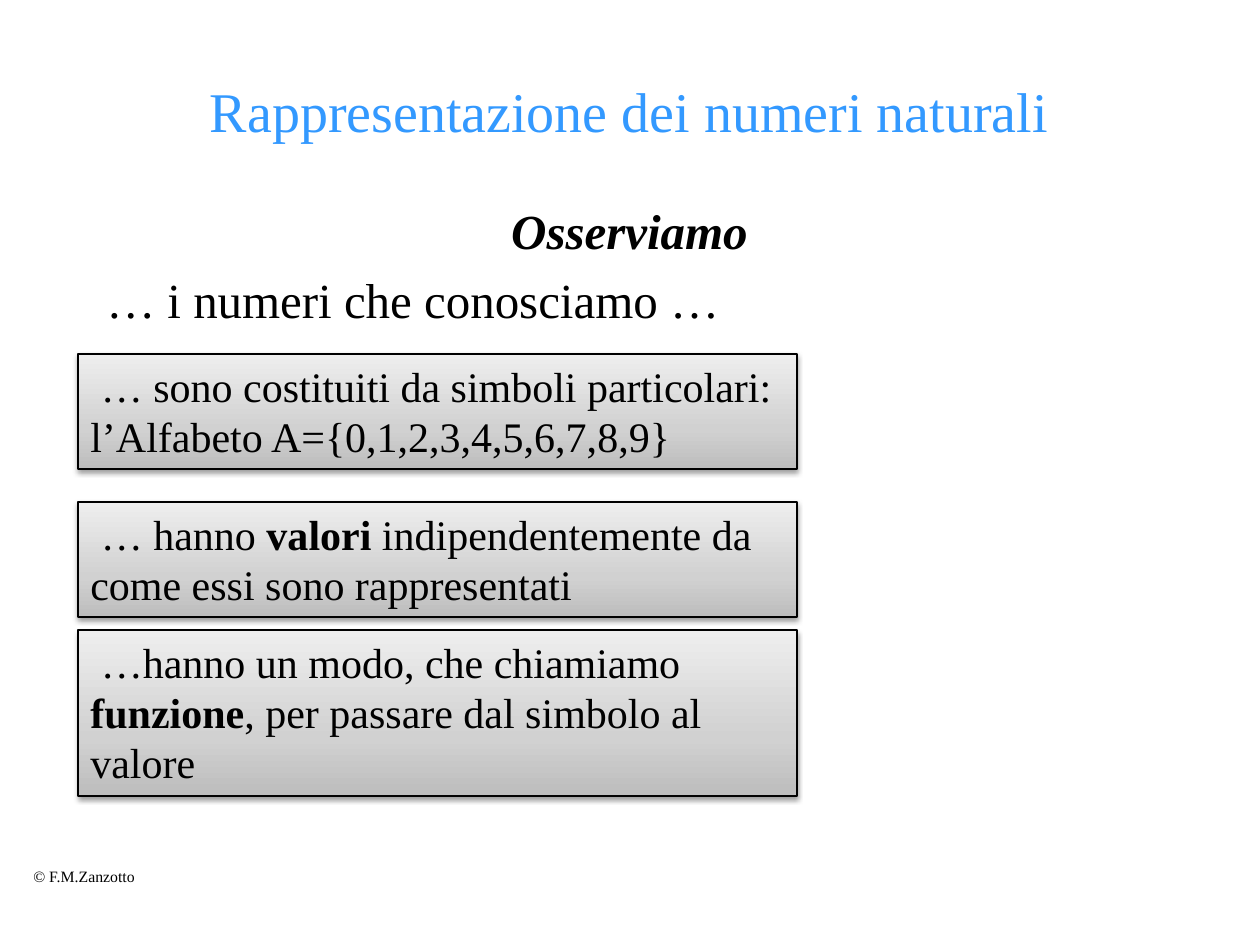
from lxml import etree
from pptx import Presentation
from pptx import util as u
from pptx.dml.color import RGBColor
from pptx.enum import shapes, text
from pptx.oxml import parse_xml
from pptx.oxml.ns import nsdecls, qn

# Content: a paragraph is a list of (text, style) runs, style "b" or "i"
TITLE = [[("Rappresentazione dei numeri naturali", "")]]
BODY = [[("Osserviamo", "bi")], [("… i numeri che conosciamo …", "")]]
FOOTER = [[("© F.M.Zanzotto", "")]]
BOXES = [  # top, height, paragraphs
    (354, 115, [[(" … sono costituiti da simboli particolari:", "")],
                [("l’Alfabeto A={0,1,2,3,4,5,6,7,8,9}", "")]]),
    (502, 115, [[(" … hanno ", ""), ("valori ", "b"),
                 ("indipendentemente da come essi sono rappresentati", "")]]),
    (630, 166, [[(" …hanno un modo, che chiamiamo ", ""), ("funzione", "b"),
                 (", per passare dal simbolo al valore", "")]]),
]
BOX_LEFT, BOX_WIDTH = 78, 719

FONT = "Times New Roman"
BLACK = RGBColor(0, 0, 0)
BLUE = RGBColor(0x33, 0x99, 0xFF)
GREYS = [(0, RGBColor(0xBD, 0xBD, 0xBD)), (35, RGBColor(0xD1, 0xD1, 0xD1)),
         (100, RGBColor(0xEE, 0xEE, 0xEE))]
LEFT, CENTER = text.PP_ALIGN.LEFT, text.PP_ALIGN.CENTER


def px(n):
    return u.Emu(round(n * 914400 / 126))


def write(sp, paragraphs, size, color=BLACK, aligns=(LEFT,), gap=0, hang=0,
          anchor=text.MSO_ANCHOR.TOP, wrap=True):
    tf = sp.text_frame
    tf.word_wrap = wrap
    tf.vertical_anchor = anchor
    for i, runs in enumerate(paragraphs):
        p = tf.add_paragraph() if i else tf.paragraphs[0]
        p.alignment = aligns[min(i, len(aligns) - 1)]
        if i and gap:
            p.space_before = u.Pt(gap)
        if hang:
            pPr = p._p.get_or_add_pPr()
            pPr.set("marL", str(px(hang)))
            pPr.set("indent", str(-px(hang)))
        for words, style in runs:
            r = p.add_run()
            r.text = words
            r.font.name, r.font.size = FONT, u.Pt(size)
            r.font.bold, r.font.italic = "b" in style, "i" in style
            r.font.color.rgb = color


def add_text(s, box, paragraphs, size, **fmt):
    write(s.shapes.add_textbox(*map(px, box)), paragraphs, size, **fmt)


def add_box(s, top, height, paragraphs):
    sp = s.shapes.add_shape(shapes.MSO_SHAPE.RECTANGLE, px(BOX_LEFT), px(top),
                            px(BOX_WIDTH), px(height))
    sp.line.color.rgb, sp.line.width = BLACK, u.Pt(0.75)

    # Grey gradient, dark at the bottom
    sp.fill.gradient()
    sp.fill.gradient_angle = 90
    stops = sp._element.spPr.find(".//" + qn("a:gsLst"))
    for stop in list(stops):
        stops.remove(stop)
    for pos, color in GREYS:
        gs = etree.SubElement(stops, qn("a:gs"), pos=str(pos * 1000))
        etree.SubElement(gs, qn("a:srgbClr"), val=str(color))

    # Soft shadow below
    sp.shadow.inherit = False
    sp._element.spPr.find(qn("a:effectLst")).append(parse_xml(
        f'<a:outerShdw {nsdecls("a")} blurRad="{u.Pt(3.1)}" dist="{u.Pt(1.6)}" '
        'dir="5400000" rotWithShape="0"><a:srgbClr val="000000">'
        '<a:alpha val="38000"/></a:srgbClr></a:outerShdw>'))
    write(sp, paragraphs, 24)


prs = Presentation()
prs.slide_width, prs.slide_height = px(1260), px(945)
s = prs.slides.add_slide(prs.slide_layouts[6])

# Footer, title and introduction
add_text(s, (21, 861, 129, 31), FOOTER, 9, wrap=False)
add_text(s, (94, 63, 1071, 94), TITLE, 32, color=BLUE, aligns=(CENTER,),
         anchor=text.MSO_ANCHOR.MIDDLE)
add_text(s, (94, 194, 1071, 160), BODY, 28, aligns=(CENTER, LEFT), gap=6, hang=47)

# Observations
for top, height, paragraphs in BOXES:
    add_box(s, top, height, paragraphs)

prs.save("out.pptx")
